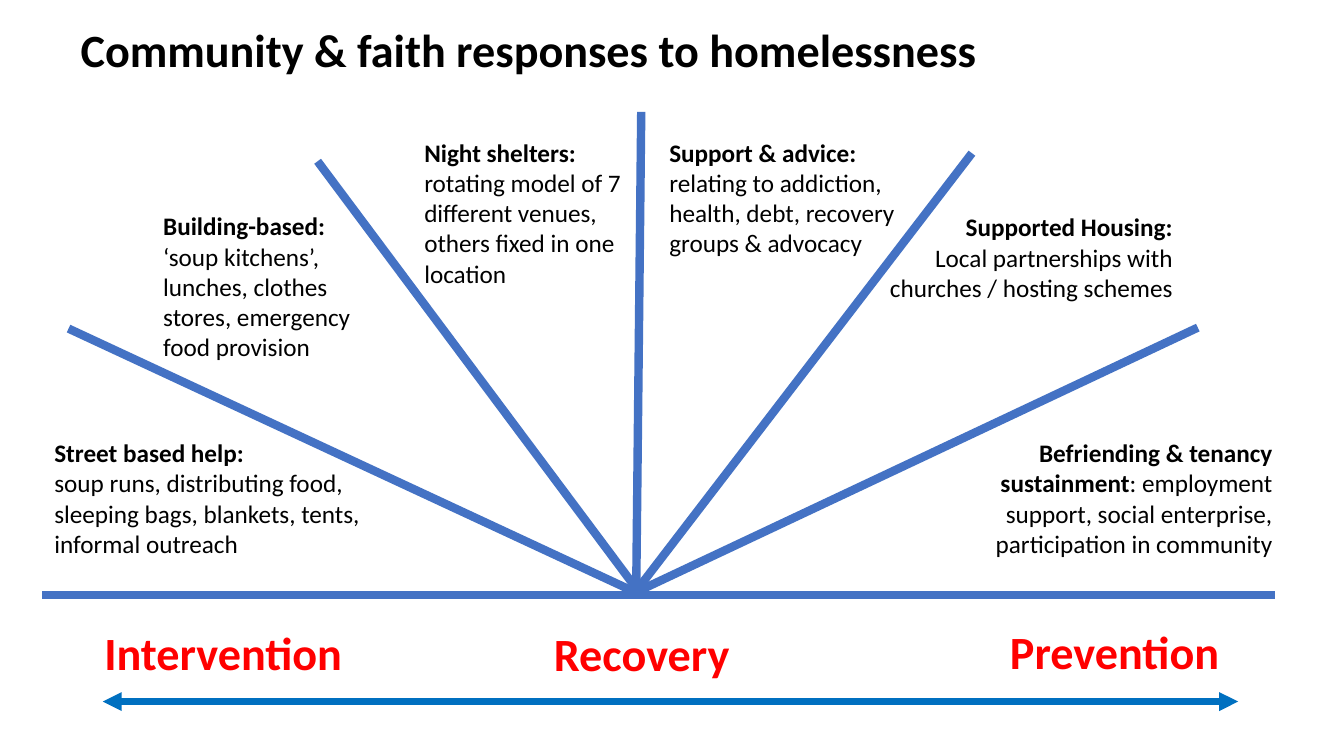
from lxml.etree import SubElement
from pptx import Presentation
from pptx.dml.color import RGBColor
from pptx.enum.shapes import MSO_CONNECTOR as Connector, MSO_SHAPE as Shape
from pptx.enum.text import MSO_ANCHOR as Anchor, PP_ALIGN as Align
from pptx.oxml.ns import qn
from pptx.util import Inches, Pt

COLORS = {"ray": "4472C4", "arrow": "0070C0", "text": "000000",
          "stage": "FF0000", "white": "FFFFFF"}
FONT = "Calibri"
TITLE = "Community & faith responses to homelessness"

# Start and end points: the baseline, then the rays from left to right
RAYS = [
    ((0.42, 5.9), (12.65, 5.9)),
    ((6.29, 5.87), (0.68, 3.26)),
    ((6.29, 5.81), (3.15, 1.6)),
    ((6.31, 5.87), (6.36, 1.11)),
    ((6.32, 5.85), (9.64, 1.52)),
    ((6.34, 5.86), (11.88, 3.25)),
]
SPECTRUM = ((1.02, 6.96), (12.28, 6.96))

# Place, alignment, paragraphs of (text, bold) runs
RESPONSES = [
    ((0.44, 4.29, 3.23, 1.31), Align.LEFT,
     [[("Street based help:", True)],
      [("soup runs, distributing food, sleeping bags, blankets, tents, "
        "informal outreach", False)]]),
    ((1.52, 2.04, 2.09, 1.62), Align.LEFT,
     [[("Building-based: ", True),
       ("‘soup kitchens’, lunches, clothes stores, emergency food provision", False)]]),
    ((4.11, 1.31, 2.2, 1.62), Align.LEFT,
     [[("Night shelters: ", True),
       ("rotating model of 7 different venues, others fixed in one location", False)]]),
    ((6.54, 1.31, 2.49, 1.31), Align.LEFT,
     [[("Support & advice:", True),
       (" relating to addiction, health, debt, recovery groups & advocacy", False)]]),
    ((8.6, 2.05, 3.13, 1.01), Align.RIGHT,
     [[("Supported Housing:", True)],
      [("Local partnerships with churches / hosting schemes", False)]]),
    ((9.46, 4.29, 3.26, 1.31), Align.RIGHT,
     [[("Befriending & tenancy sustainment", True),
       (": employment support, social enterprise, participation in community", False)]]),
]
STAGES = [
    ("Intervention", (0.23, 6.14, 3.97, 0.66)),
    ("Recovery", (4.38, 6.15, 3.97, 0.66)),
]
PREVENTION = ("Prevention", (9.64, 6.13, 2.83, 0.66))


def rgb(name):
    return RGBColor.from_string(COLORS[name])


def write(box, paragraphs, size, color, align):
    frame = box.text_frame
    frame.word_wrap = True
    frame.vertical_anchor = Anchor.TOP
    for index, runs in enumerate(paragraphs):
        para = frame.add_paragraph() if index else frame.paragraphs[0]
        para.alignment = align
        para.line_spacing = 1.0
        para.space_before = Pt(0)
        for text, bold in runs:
            span = para.add_run()
            span.text = text
            span.font.name = FONT
            span.font.size = Pt(size)
            span.font.bold = bold
            span.font.color.rgb = rgb(color)


def draw_line(page, start, end, color, width):
    line = page.shapes.add_connector(
        Connector.STRAIGHT, *(Inches(value) for value in start + end))
    line.line.color.rgb = rgb(color)
    line.line.width = Pt(width)
    SubElement(line._element.spPr, qn("a:effectLst"))
    return line


deck = Presentation()
deck.slide_width, deck.slide_height = Inches(13.33), Inches(7.5)
page = deck.slides.add_slide(deck.slide_layouts[5])

# Title
title = page.shapes.title
title.left, title.top = Inches(0.07), Inches(0.16)
title.width, title.height = Inches(10.35), Inches(0.66)
write(title, [[(TITLE, True)]], 33, "text", Align.CENTER)

# Fan of rays
for start, end in RAYS:
    draw_line(page, start, end, "ray", 6)

# Responses between the rays
for place, align, paragraphs in RESPONSES:
    box = page.shapes.add_textbox(*map(Inches, place))
    write(box, paragraphs, 18, "text", align)

# Stages below the baseline
for name, place in STAGES:
    box = page.shapes.add_textbox(*map(Inches, place))
    write(box, [[(name, True)]], 33, "stage", Align.CENTER)

name, place = PREVENTION
panel = page.shapes.add_shape(Shape.RECTANGLE, *map(Inches, place))
panel.shadow.inherit = False
panel.fill.solid()
panel.fill.fore_color.rgb = rgb("white")
panel.line.fill.background()
write(panel, [[(name, True)]], 33, "stage", Align.CENTER)

# Double-headed arrow
arrow = draw_line(page, *SPECTRUM, "arrow", 4.5)
for tip in ("a:headEnd", "a:tailEnd"):
    SubElement(arrow.line._get_or_add_ln(), qn(tip), type="triangle")

deck.save("out.pptx")
